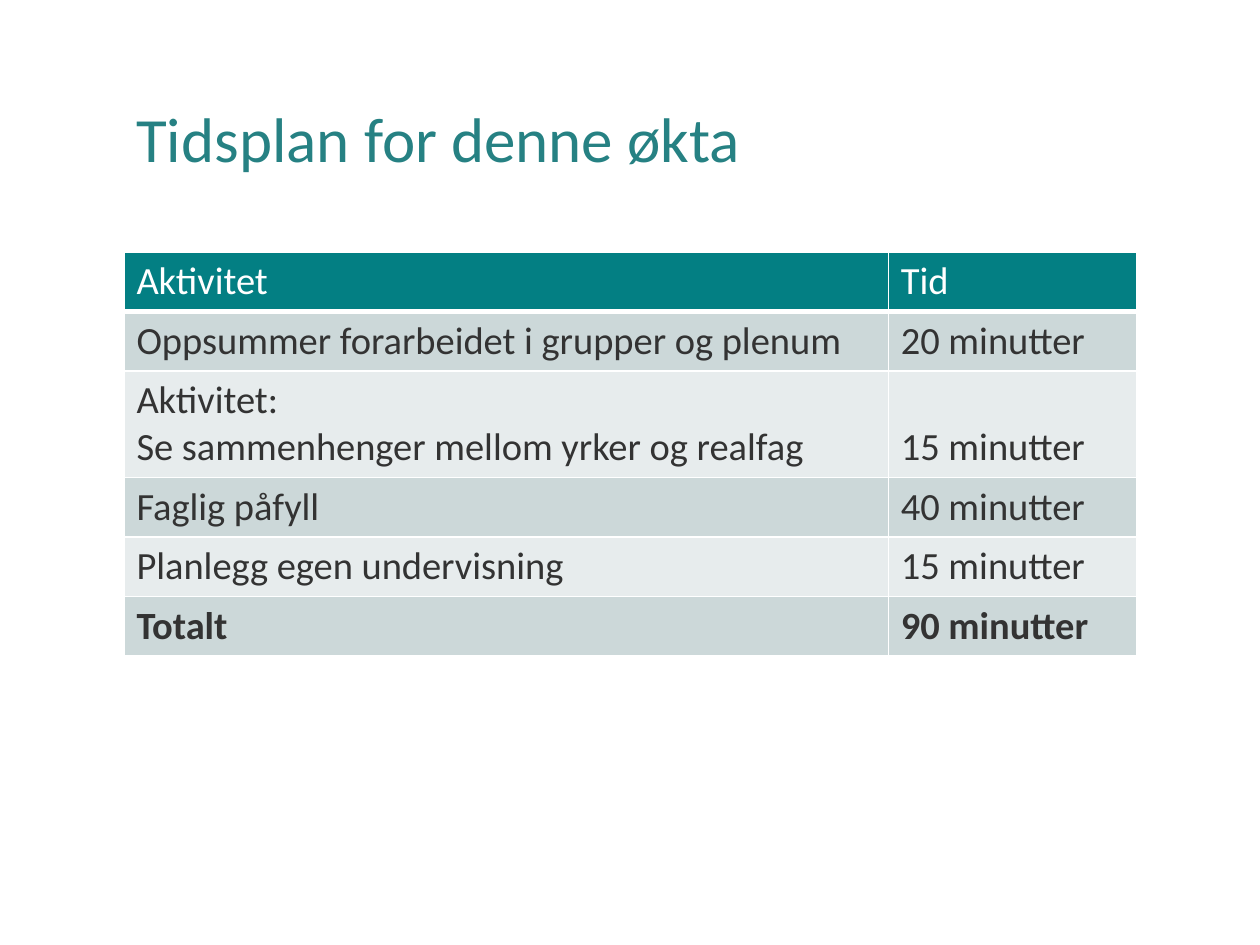
from lxml import etree
from pptx import Presentation
from pptx.dml.color import RGBColor
from pptx.enum import text
from pptx.oxml.ns import qn
from pptx.util import Pt

# Content
TITLE = "Tidsplan for denne økta"
SCHEDULE = [
    ("Aktivitet", "Tid"),
    ("Oppsummer forarbeidet i grupper og plenum", "20 minutter"),
    ("Aktivitet:\nSe sammenhenger mellom yrker og realfag", "15 minutter"),
    ("Faglig påfyll", "40 minutter"),
    ("Planlegg egen undervisning", "15 minutter"),
    ("Totalt", "90 minutter"),
]

# Look
COLORS = {"title": "268183", "header": "037F83", "dark_band": "CCD8D9",
          "light_band": "E7ECED", "body": "333333", "white": "FFFFFF"}
FONT = "Calibri"
LEFT, TABLE_TOP = 70.8, 144
COLUMN_WIDTHS = (436.8, 142.2)
LINE_HEIGHT, CELL_PADDING = 26.8, 7.2


def style(paragraph, size, color, bold=False):
    for run in paragraph.runs:
        run.font.name, run.font.size, run.font.bold = FONT, Pt(size), bold
        run.font.color.rgb = RGBColor.from_string(COLORS[color])


def add_borders(cell, bold_side):
    properties = cell._tc.get_or_add_tcPr()
    for position, side in enumerate("LRTB"):
        width = 3 if side == bold_side else 1
        line = etree.Element(qn(f"a:ln{side}"), w=str(Pt(width)))
        fill = etree.SubElement(line, qn("a:solidFill"))
        etree.SubElement(fill, qn("a:srgbClr"), val=COLORS["white"])
        properties.insert(position, line)


prs = Presentation()
prs.slide_width, prs.slide_height = Pt(720), Pt(540)
slide = prs.slides.add_slide(prs.slide_layouts[6])

# Title
title = slide.shapes.add_textbox(Pt(LEFT), Pt(28.8), Pt(596.9), Pt(104.4)).text_frame
title.word_wrap = True
title.vertical_anchor = text.MSO_ANCHOR.MIDDLE
title.text = TITLE
title.paragraphs[0].line_spacing = 0.9
style(title.paragraphs[0], 36, "title")

# Schedule table
heights = [LINE_HEIGHT * (activity.count("\n") + 1) + CELL_PADDING
           for activity, _ in SCHEDULE]
table = slide.shapes.add_table(
    len(SCHEDULE), len(COLUMN_WIDTHS), Pt(LEFT), Pt(TABLE_TOP),
    Pt(sum(COLUMN_WIDTHS)), Pt(sum(heights))).table
table.horz_banding = False
for column, width in zip(table.columns, COLUMN_WIDTHS):
    column.width = Pt(width)

last = len(SCHEDULE) - 1
for r, entries in enumerate(SCHEDULE):
    table.rows[r].height = Pt(heights[r])
    band = "header" if r == 0 else "dark_band" if r % 2 else "light_band"
    for c, entry in enumerate(entries):
        cell = table.cell(r, c)
        cell.text_frame.text = entry
        # Times line up with the last line of the activity
        if c == 1 and "\n" in entries[0]:
            cell.vertical_anchor = text.MSO_ANCHOR.BOTTOM
        cell.fill.solid()
        cell.fill.fore_color.rgb = RGBColor.from_string(COLORS[band])
        add_borders(cell, {0: "B", 1: "T"}.get(r))
        for paragraph in cell.text_frame.paragraphs:
            style(paragraph, 22, "body" if r else "white", bold=r == last)

prs.save("out.pptx")
